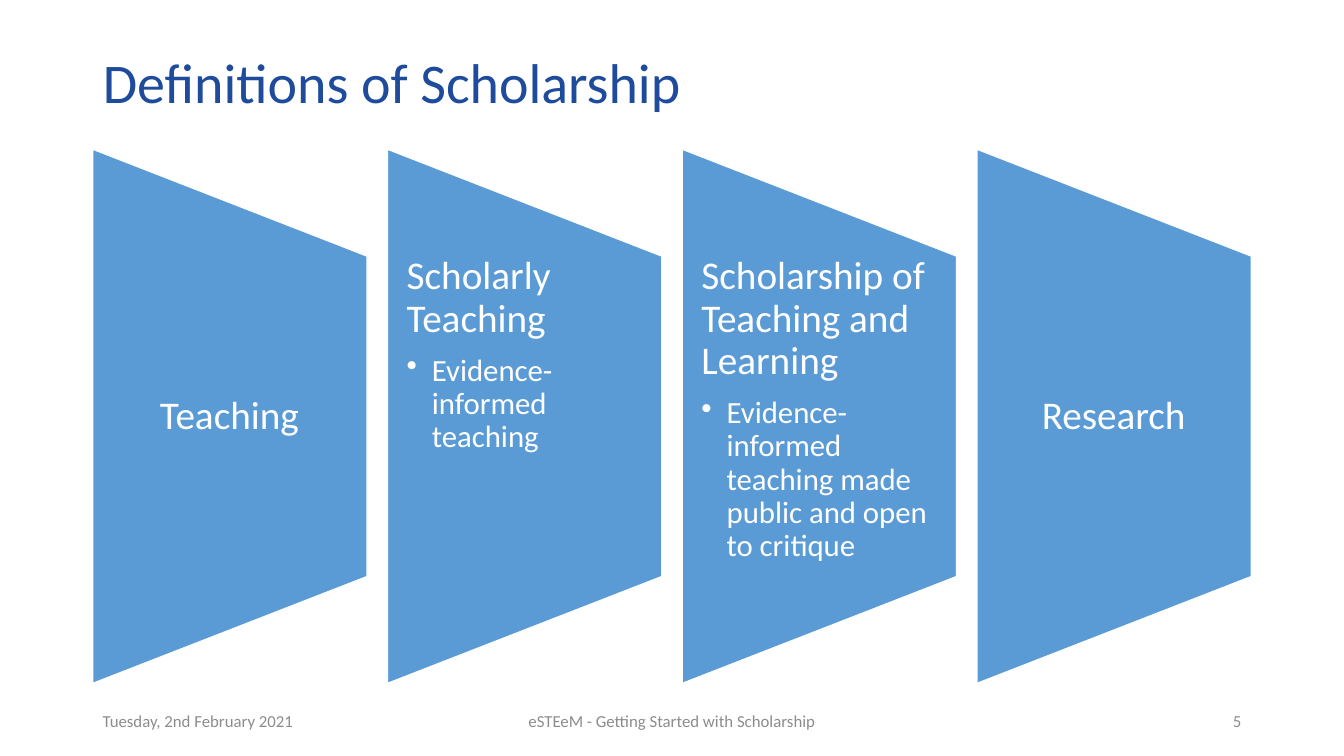
from lxml import etree
from pptx import Presentation
from pptx.dml.color import RGBColor
from pptx.enum.shapes import MSO_SHAPE
from pptx.enum.text import MSO_ANCHOR, MSO_AUTO_SIZE, PP_ALIGN
from pptx.oxml.ns import qn
from pptx.util import Inches, Pt

TRAPEZOID = MSO_SHAPE.FLOWCHART_MANUAL_OPERATION
TOP, MIDDLE = MSO_ANCHOR.TOP, MSO_ANCHOR.MIDDLE
LEFT, CENTER, RIGHT = PP_ALIGN.LEFT, PP_ALIGN.CENTER, PP_ALIGN.RIGHT
WHITE, BLUE, NAVY, GREY = "FFFFFF", "5B9BD5", "1E4B9B", "8C8C8C"

# Grid: four columns between equal side margins
W, H = 13.33, 7.5
MARGIN = 0.92
CONTENT_W = W - 2 * MARGIN
COL_W, PANEL_TOP, PANEL_H = 2.72, 1.48, 5.3
PITCH = (CONTENT_W - COL_W) / 3


def rgb(value):
    return RGBColor.from_string(value)


def add_text(tf, text, size, color, align=LEFT, line=None, after=None, bullet=False):
    """Fill the empty first paragraph of the frame, or append one."""
    p = tf.paragraphs[0] if not tf.text else tf.add_paragraph()
    if bullet:
        pPr = p._p.get_or_add_pPr()
        pPr.set("marL", str(Inches(0.25)))
        pPr.set("indent", str(-Inches(0.25)))
        etree.SubElement(pPr, qn("a:buChar")).set("char", "•")
        p.level = 1
    p.alignment = align
    if line:
        p.line_spacing = line
    if after:
        p.space_after = Pt(after)
    r = p.add_run()
    r.text = text
    r.font.name, r.font.size = "Calibri", Pt(size)
    r.font.color.rgb = rgb(color)


prs = Presentation()
prs.slide_width, prs.slide_height = Inches(W), Inches(H)
s = prs.slides.add_slide(prs.slide_layouts[5])

# Title
title = s.shapes.title
title.left, title.top = Inches(MARGIN), Inches(0.4)
title.width, title.height = Inches(CONTENT_W), Inches(0.9)
tf = title.text_frame
tf.auto_size, tf.vertical_anchor = MSO_AUTO_SIZE.NONE, MIDDLE
add_text(tf, "Definitions of Scholarship", 40, NAVY, line=0.9)

# Panels: heading and optional bullet
panels = [
    ("Teaching", None),
    ("Scholarly Teaching", "Evidence-informed teaching"),
    ("Scholarship of Teaching and Learning",
     "Evidence-informed teaching made public and open to critique"),
    ("Research", None),
]
for i, (heading, detail) in enumerate(panels):
    x = MARGIN + i * PITCH
    # Width and height swap because the trapezoid is turned on its side
    turn = (PANEL_H - COL_W) / 2
    sp = s.shapes.add_shape(TRAPEZOID, Inches(x - turn), Inches(PANEL_TOP + turn),
                            Inches(PANEL_H), Inches(COL_W))
    sp.rotation = 270
    sp.shadow.inherit = False
    sp.fill.solid()
    sp.fill.fore_color.rgb = rgb(BLUE)
    sp.line.color.rgb = rgb(WHITE)
    sp.line.width = Pt(1)

    # Text fills the middle three fifths of the panel
    box = s.shapes.add_textbox(Inches(x), Inches(PANEL_TOP + PANEL_H / 5),
                               Inches(COL_W), Inches(PANEL_H * 3 / 5))
    tf = box.text_frame
    tf.word_wrap = True
    tf.margin_left, tf.margin_right = Inches(0.19), Inches(0.2)
    tf.margin_top = tf.margin_bottom = 0
    tf.vertical_anchor = TOP if detail else MIDDLE
    add_text(tf, heading, 28, WHITE, align=LEFT if detail else CENTER,
             line=0.9, after=10)
    if detail:
        add_text(tf, detail, 22, WHITE, line=0.9, after=3, bullet=True)

# Footer: date, talk name, page number
footer = [
    ("Tuesday, 2nd February 2021", MARGIN, 3, LEFT),
    ("eSTEeM - Getting Started with Scholarship", (W - 4.5) / 2, 4.5, CENTER),
    ("5", W - MARGIN - 3, 3, RIGHT),
]
for text, x, width, align in footer:
    box = s.shapes.add_textbox(Inches(x), Inches(6.95), Inches(width), Inches(0.4))
    tf = box.text_frame
    tf.word_wrap, tf.vertical_anchor = True, MIDDLE
    add_text(tf, text, 12, GREY, align=align)

prs.save("out.pptx")
